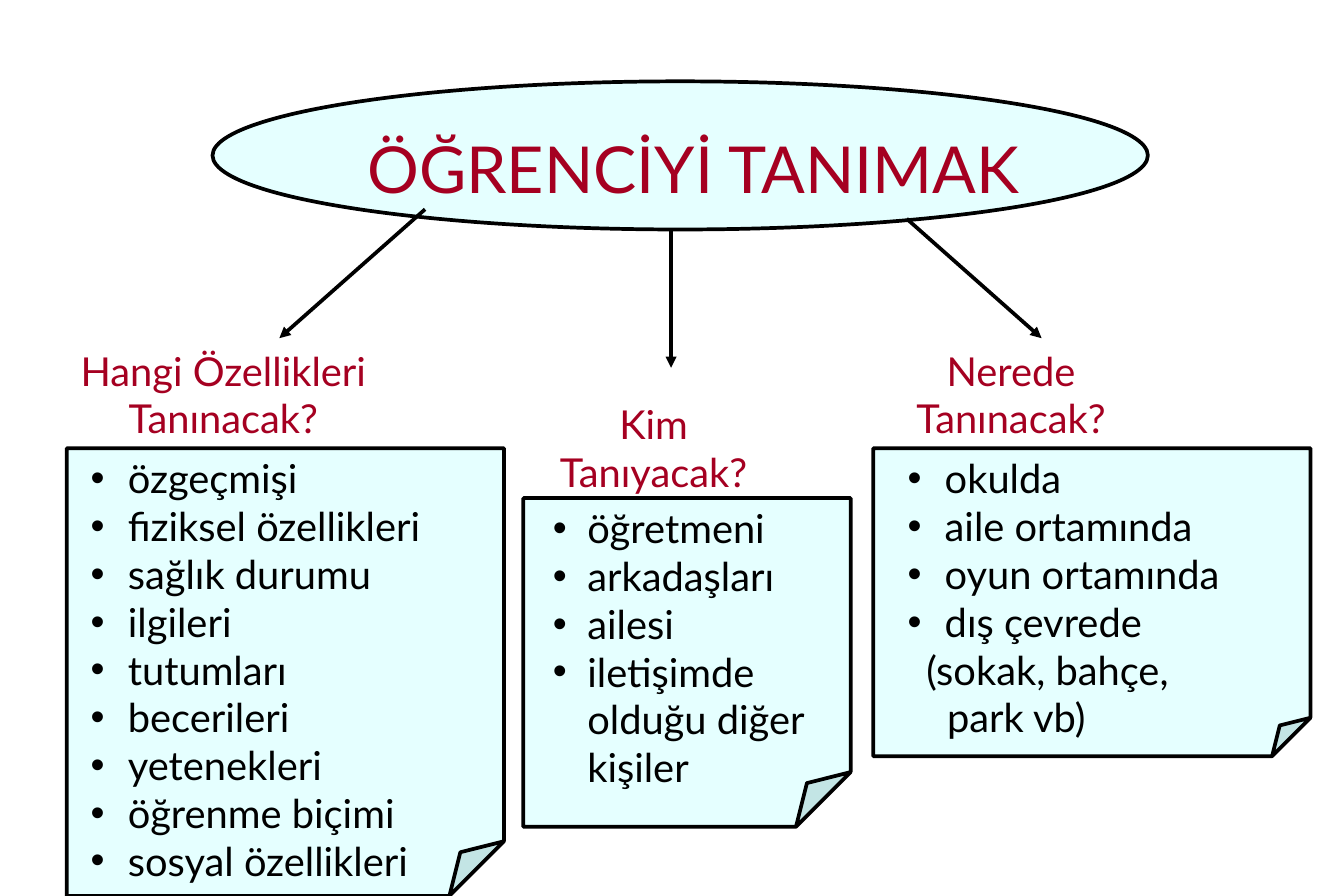
import dataclasses

import lxml.etree
import pptx
import pptx.dml.color
import pptx.enum.shapes
import pptx.enum.text
import pptx.oxml.ns
import pptx.util

Cm = pptx.util.Cm
Shapes = pptx.enum.shapes.MSO_SHAPE
Align = pptx.enum.text.PP_ALIGN
Anchor = pptx.enum.text.MSO_ANCHOR


@dataclasses.dataclass(frozen=True)
class Theme:
    font: str = "Lato"
    title_size: int = 39
    body_size: int = 24
    line_width: float = 2.25
    accent: str = "A50021"
    ink: str = "000000"
    panel: str = "CCFFFF"
    panel_opacity: int = 50000


THEME = Theme()
BULLET_INDENT = 0.79
NARROW_INDENT = 0.73
HEADING_WIDTH, HEADING_HEIGHT = 7.1, 2.29

NOTES = [
    (18.57, 9.53, 9.3, 6.55, 12500),
    (11.13, 10.59, 6.96, 6.99, 16700),
    (1.42, 9.53, 9.3, 9.52, 12500),
]
ARROWS = [
    (14.27, 4.88, 14.27, 7.82),
    (9.04, 4.45, 5.94, 7.19),
    (19.28, 4.65, 22.15, 7.19),
]
HEADINGS = [
    (4.75, 7.24, ["Hangi Özellikleri", "Tanınacak?"]),
    (13.9, 8.38, ["Kim", "Tanıyacak?"]),
    (21.5, 7.24, ["Nerede", "Tanınacak?"]),
]
LISTS = [
    ((1.68, 9.53, 8.5, 9.52), BULLET_INDENT,
     ["özgeçmişi", "fiziksel özellikleri", "sağlık durumu", "ilgileri", "tutumları",
      "becerileri", "yetenekleri", "öğrenme biçimi", "sosyal özellikleri"], []),
    ((11.51, 10.59, 6.1, 6.99), NARROW_INDENT,
     ["öğretmeni", "arkadaşları", "ailesi", "iletişimde olduğu diğer kişiler"], []),
    ((19.05, 9.53, 8.15, 6.35), BULLET_INDENT,
     ["okulda", "aile ortamında", "oyun ortamında", "dış çevrede"],
     [("(sokak, bahçe,", 0.4), ("park vb)", 0.84)]),
]


def color(value):
    """Turn a hexadecimal string into a colour."""
    return pptx.dml.color.RGBColor.from_string(value)


def apply_format(target, values):
    """Set every attribute named in values on the target."""
    for name, value in values.items():
        setattr(target, name, value)


def add_child(parent, tag, **attributes):
    """Append a drawing element to the parent."""
    return lxml.etree.SubElement(parent, pptx.oxml.ns.qn(tag), attributes)


def find_child(parent, tag):
    """Find the first descendant with the given tag."""
    return parent.find(".//" + pptx.oxml.ns.qn(tag))


def style_line(line):
    """Give an outline the theme colour and width."""
    line.color.rgb = color(THEME.ink)
    line.width = pptx.util.Pt(THEME.line_width)


def add_panel(slide, kind, left, top, width, height, fold=None):
    """Add a translucent outlined shape."""
    shape = slide.shapes.add_shape(kind, Cm(left), Cm(top), Cm(width), Cm(height))
    shape.shadow.inherit = False
    shape.fill.solid()
    shape.fill.fore_color.rgb = color(THEME.panel)
    properties = shape._element.spPr
    add_child(find_child(properties, "a:srgbClr"), "a:alpha", val=str(THEME.panel_opacity))
    style_line(shape.line)
    if fold is not None:
        add_child(find_child(properties, "a:avLst"), "a:gd", name="adj", fmla=f"val {fold}")


def add_arrow(slide, start_x, start_y, end_x, end_y):
    """Add a straight arrow pointing at its end."""
    arrow = slide.shapes.add_connector(
        pptx.enum.shapes.MSO_CONNECTOR.STRAIGHT,
        Cm(start_x), Cm(start_y), Cm(end_x), Cm(end_y))
    style_line(arrow.line)
    properties = arrow._element.spPr
    add_child(find_child(properties, "a:ln"), "a:tailEnd", type="triangle")
    add_child(properties, "a:effectLst")


def add_text_box(slide, left, top, width, height, anchor=Anchor.TOP):
    """Add an empty wrapping text box and return its frame."""
    frame = slide.shapes.add_textbox(Cm(left), Cm(top), Cm(width), Cm(height)).text_frame
    apply_format(frame, {"word_wrap": True, "vertical_anchor": anchor})
    return frame


def add_paragraph(frame, text, size, ink, alignment=Align.LEFT, indent=0, bullet=False):
    """Write the next paragraph of a frame."""
    first = frame.paragraphs[0]
    paragraph = frame.add_paragraph() if first.runs else first
    properties = paragraph._p.get_or_add_pPr()
    properties.set("marL", str(int(Cm(indent))))
    properties.set("indent", str(-int(Cm(indent)) if bullet else 0))
    if bullet:
        add_child(properties, "a:buFont", typeface="Arial")
        add_child(properties, "a:buChar", char="•")
    paragraph.alignment = alignment
    run = paragraph.add_run()
    run.text = text
    apply_format(run.font, {"name": THEME.font, "size": pptx.util.Pt(size)})
    run.font.color.rgb = color(ink)


def add_heading(slide, center, top, lines):
    """Add a centred question above a note."""
    frame = add_text_box(slide, center - HEADING_WIDTH / 2, top, HEADING_WIDTH, HEADING_HEIGHT)
    for line in lines:
        add_paragraph(frame, line, THEME.body_size, THEME.accent, Align.CENTER)


def add_list(slide, place, indent, items, remarks):
    """Add bulleted items followed by indented plain lines."""
    frame = add_text_box(slide, *place)
    for item in items:
        add_paragraph(frame, item, THEME.body_size, THEME.ink, indent=indent, bullet=True)
    for remark, remark_indent in remarks:
        add_paragraph(frame, remark, THEME.body_size, THEME.ink, indent=remark_indent)


def main():
    """Build the slide and save it."""
    presentation = pptx.Presentation()
    apply_format(presentation, {"slide_width": Cm(28.58), "slide_height": Cm(19.05)})
    slide = presentation.slides.add_slide(presentation.slide_layouts[6])
    for note in NOTES:
        add_panel(slide, Shapes.FOLDED_CORNER, *note)
    add_panel(slide, Shapes.OVAL, 4.52, 1.73, 19.89, 3.15)
    title = add_text_box(slide, 1.9, 1.52, 25.7, 3, Anchor.BOTTOM)
    add_paragraph(title, "ÖĞRENCİYİ TANIMAK", THEME.title_size, THEME.accent, Align.CENTER)
    for arrow in ARROWS:
        add_arrow(slide, *arrow)
    for heading in HEADINGS:
        add_heading(slide, *heading)
    for content in LISTS:
        add_list(slide, *content)
    presentation.save("out.pptx")


if __name__ == "__main__":
    main()
